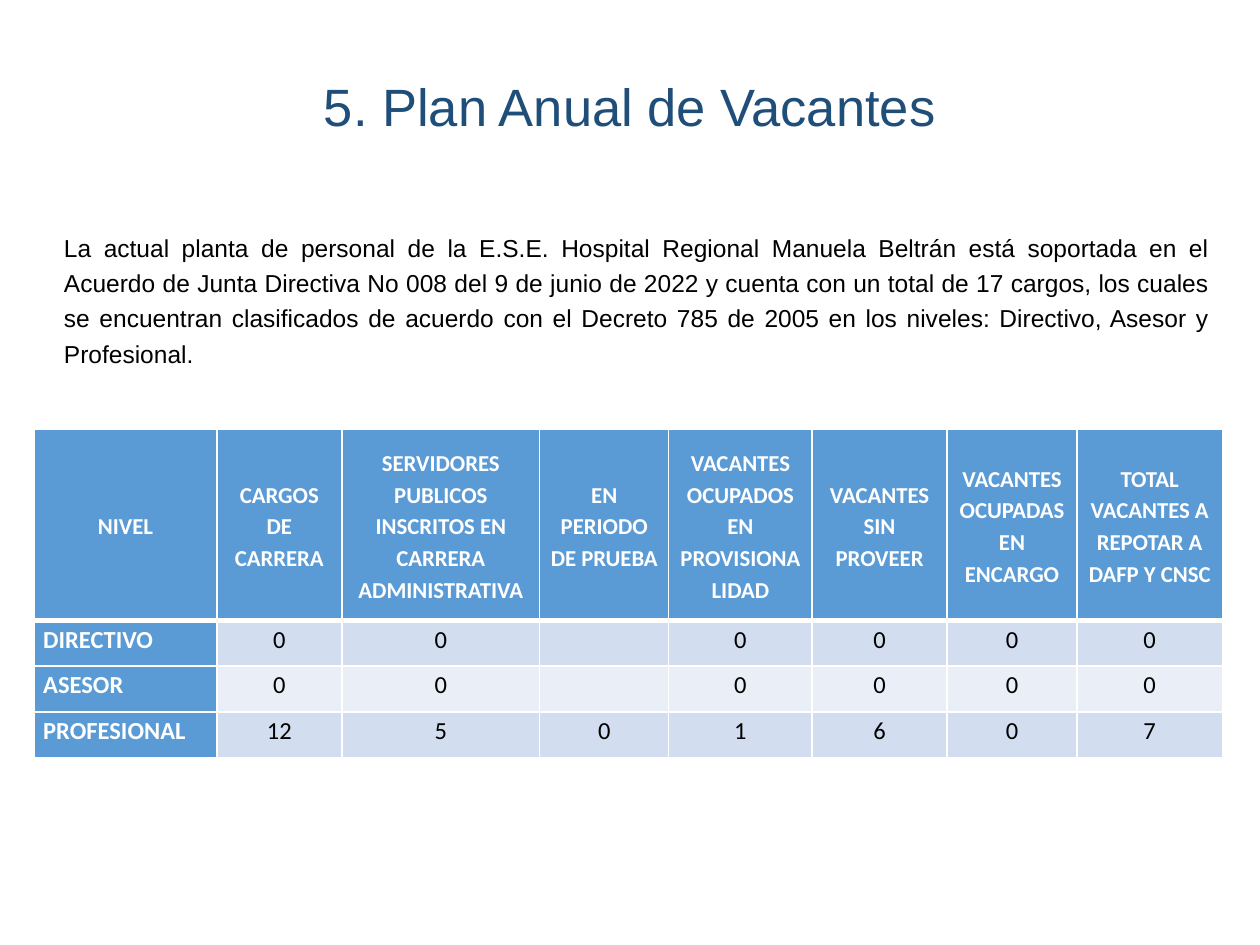
from lxml.etree import SubElement
from pptx import Presentation
from pptx.dml.color import RGBColor
from pptx.enum.text import MSO_ANCHOR as Anchor, PP_ALIGN as Align
from pptx.oxml.ns import qn
from pptx.util import Cm, Pt

WHITE = RGBColor(0xFF, 0xFF, 0xFF)
BLACK = RGBColor(0x00, 0x00, 0x00)
NAVY = RGBColor(0x1F, 0x4E, 0x79)
BLUE = RGBColor(0x5B, 0x9B, 0xD5)
BANDS = (RGBColor(0xD2, 0xDE, 0xEF), RGBColor(0xEA, 0xEF, 0xF7))

TITLE = "5. Plan Anual de Vacantes"
INTRODUCTION = (
    "La actual planta de personal de la E.S.E. Hospital Regional Manuela Beltrán "
    "está soportada en el Acuerdo de Junta Directiva No 008 del 9 de junio de 2022 "
    "y cuenta con un total de 17 cargos, los cuales se encuentran clasificados de "
    "acuerdo con el Decreto 785 de 2005 en los niveles: Directivo, Asesor y Profesional."
)
VACANCIES = (
    ("NIVEL", "CARGOS DE CARRERA",
     "SERVIDORES PUBLICOS INSCRITOS EN CARRERA ADMINISTRATIVA",
     "EN PERIODO DE PRUEBA", "VACANTES OCUPADOS EN PROVISIONALIDAD",
     "VACANTES SIN PROVEER", "VACANTES OCUPADAS EN ENCARGO",
     "TOTAL VACANTES A REPOTAR A DAFP Y CNSC"),
    ("DIRECTIVO", "0", "0", "", "0", "0", "0", "0"),
    ("ASESOR", "0", "0", "", "0", "0", "0", "0"),
    ("PROFESIONAL", "12", "5", "0", "1", "6", "0", "7"),
)
COLUMN_WIDTHS = (3.68, 2.52, 3.99, 2.6, 2.89, 2.72, 2.62, 2.93)
ROW_HEIGHTS = (3.85, 0.92, 0.92, 0.92)


def write_paragraph(frame, text, font_name, size, color, align, spacing, bold=False):
    """Write one formatted run in the first paragraph of a text frame."""
    paragraph = frame.paragraphs[0]
    paragraph.font.size = Pt(size)
    paragraph.alignment = align
    paragraph.line_spacing = spacing
    if text:
        run = paragraph.add_run()
        run.text = text
        run.font.name = font_name
        run.font.size = Pt(size)
        run.font.bold = bold
        run.font.color.rgb = color
    return paragraph


def place_title(slide, left, top, width, height):
    """Place the slide title in the upper part of its box."""
    title = slide.shapes.title
    title.left, title.top, title.width, title.height = left, top, width, height
    frame = title.text_frame
    frame.vertical_anchor = Anchor.MIDDLE
    frame.margin_bottom = Cm(1.45)
    write_paragraph(frame, TITLE, "Arial", 30, NAVY, Align.CENTER, 0.9)


def place_introduction(slide, left, top, width, height):
    """Place the justified introductory paragraph."""
    frame = slide.shapes.add_textbox(left, top, width, height).text_frame
    frame.word_wrap = True
    write_paragraph(frame, INTRODUCTION, "Arial", 14, BLACK, Align.JUSTIFY, 1.2)


def set_borders(cell, top, bottom):
    """Give a cell white borders with the given top and bottom widths."""
    properties = cell._tc.get_or_add_tcPr()
    for side, points in (("L", 1), ("R", 1), ("T", top), ("B", bottom)):
        line = SubElement(properties, qn(f"a:ln{side}"), w=str(Pt(points)))
        fill = SubElement(line, qn("a:solidFill"))
        SubElement(fill, qn("a:srgbClr"), val=str(WHITE))


def format_cell(cell, text, row, column):
    """Fill one cell according to its role as header, level or value."""
    header, level = row == 0, column == 0
    strong = header or level
    set_borders(cell, 3 if row == 1 else 1, 3 if header else 1)
    cell.fill.solid()
    cell.fill.fore_color.rgb = BLUE if strong else BANDS[(row - 1) % 2]
    cell.margin_left = cell.margin_right = Cm(0.18)
    cell.margin_top = cell.margin_bottom = 0
    cell.vertical_anchor = Anchor.MIDDLE if header else Anchor.TOP
    align = Align.JUSTIFY if level and not header else Align.CENTER
    paragraph = write_paragraph(
        cell.text_frame, text, "Calibri", 13 if header else 14,
        WHITE if strong else BLACK, align, 1.15, strong)
    paragraph.space_after = Pt(8)


def place_vacancies(slide, left, top, width, height):
    """Place the table of vacancies by level."""
    table = slide.shapes.add_table(
        len(VACANCIES), len(COLUMN_WIDTHS), left, top, width, height).table
    for column, size in zip(table.columns, COLUMN_WIDTHS):
        column.width = Cm(size)
    for row, size in zip(table.rows, ROW_HEIGHTS):
        row.height = Cm(size)
    for row, texts in enumerate(VACANCIES):
        for column, text in enumerate(texts):
            format_cell(table.cell(row, column), text, row, column)


def main():
    """Build and save the vacancy plan slide."""
    presentation = Presentation()
    presentation.slide_width, presentation.slide_height = Cm(25.4), Cm(19.05)
    slide = presentation.slides.add_slide(presentation.slide_layouts[5])
    place_title(slide, Cm(1.75), Cm(1.02), Cm(21.9), Cm(3.68))
    place_introduction(slide, Cm(1.04), Cm(4.45), Cm(23.6), Cm(2.74))
    place_vacancies(slide, Cm(0.69), Cm(8.66), Cm(sum(COLUMN_WIDTHS)), Cm(sum(ROW_HEIGHTS)))
    presentation.save("out.pptx")


if __name__ == "__main__":
    main()
